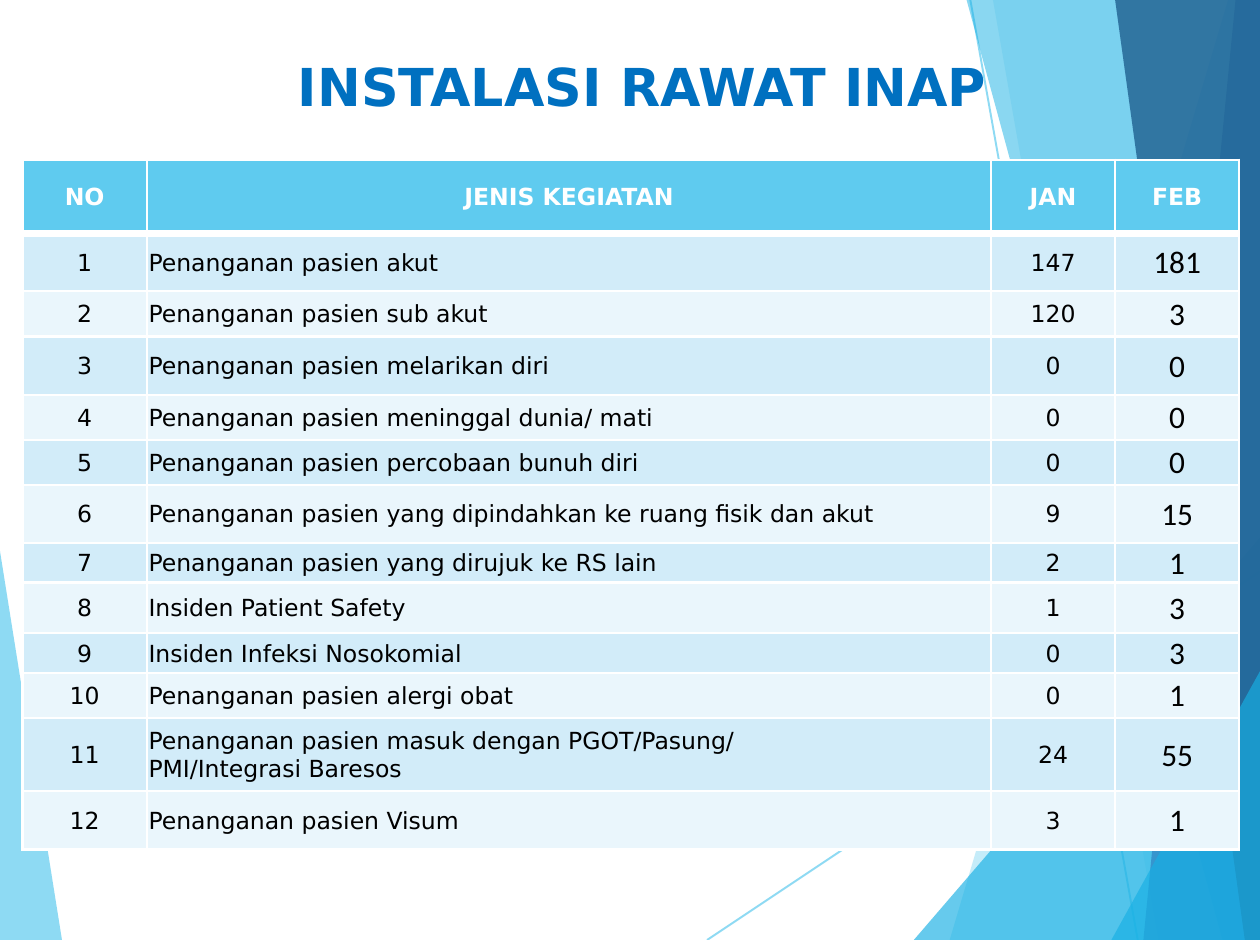
from lxml import etree
from pptx import Presentation
from pptx.dml.color import RGBColor
from pptx.enum.shapes import MSO_CONNECTOR
from pptx.enum.text import MSO_ANCHOR, PP_ALIGN
from pptx.oxml.ns import qn
from pptx.util import Pt

PX = 9144
WIDTH, HEIGHT = 670, 500

CENTER, LEFT = PP_ALIGN.CENTER, PP_ALIGN.LEFT
TOP, MIDDLE = MSO_ANCHOR.TOP, MSO_ANCHOR.MIDDLE
STRAIGHT = MSO_CONNECTOR.STRAIGHT

SKY = RGBColor(0x5F, 0xCB, 0xEF)
CYAN = RGBColor(0x17, 0xB0, 0xE4)
BLUE = RGBColor(0x2E, 0x83, 0xC3)
NAVY = RGBColor(0x22, 0x62, 0x92)
TITLE_BLUE = RGBColor(0x00, 0x70, 0xC0)
BAND_DARK = RGBColor(0xD2, 0xEC, 0xF9)
BAND_LIGHT = RGBColor(0xEA, 0xF6, 0xFC)
WHITE = RGBColor(0xFF, 0xFF, 0xFF)
BLACK = RGBColor(0x00, 0x00, 0x00)

SANS, CALIBRI = "DejaVu Sans", "Calibri"

LEFT_FACET = ([(0, 293), (33, 500), (0, 500)], SKY, 70)
RAYS = [(376, 500, 670, 304), (516, 0, 605, 500)]
RIGHT_FACETS = [
    ([(653, 0), (505, 500), (670, 500), (670, 0)], SKY, 36),
    ([(528, 0), (616, 500), (670, 500), (670, 0)], SKY, 20),
    ([(486, 500), (670, 286), (670, 500)], CYAN, 66),
    ([(514, 0), (650, 500), (670, 500), (670, 0)], CYAN, 50),
    ([(657, 0), (608, 500), (670, 500), (670, 0)], BLUE, 70),
    ([(593, 0), (662, 500), (670, 500), (670, 0)], NAVY, 82),
    ([(591, 500), (670, 357), (670, 500)], CYAN, 66),
]

HEADERS = ["NO", "JENIS KEGIATAN", "JAN", "FEB"]
ACTIVITIES = [
    ("Penanganan pasien akut", 147, 181),
    ("Penanganan pasien sub akut", 120, 3),
    ("Penanganan pasien melarikan diri", 0, 0),
    ("Penanganan pasien meninggal dunia/ mati", 0, 0),
    ("Penanganan pasien percobaan bunuh diri", 0, 0),
    ("Penanganan pasien yang dipindahkan ke ruang fisik dan akut", 9, 15),
    ("Penanganan pasien yang dirujuk ke RS lain", 2, 1),
    ("Insiden Patient Safety", 1, 3),
    ("Insiden Infeksi Nosokomial", 0, 3),
    ("Penanganan pasien alergi obat", 0, 1),
    ("Penanganan pasien masuk dengan PGOT/Pasung/\nPMI/Integrasi Baresos", 24, 55),
    ("Penanganan pasien Visum", 3, 1),
]
COLUMN_WIDTHS = [66, 449, 66, 66]
ROW_HEIGHTS = [39, 31, 24, 31, 24, 24, 31, 21, 27, 21, 24, 39, 31]


class Deck:
    def __init__(self):
        self.prs = Presentation()
        self.prs.slide_width = WIDTH * PX
        self.prs.slide_height = HEIGHT * PX
        self.s = self.prs.slides.add_slide(self.prs.slide_layouts[6])

    def set_alpha(self, sp, percent):
        clr = next(sp._element.spPr.iter(qn("a:srgbClr")))
        etree.SubElement(clr, qn("a:alpha"), val=str(percent * 1000))

    def facet(self, points, color, alpha):
        builder = self.s.shapes.build_freeform(*points[0], scale=PX)
        builder.add_line_segments(points[1:], close=True)
        sp = builder.convert_to_shape()
        sp.shadow.inherit = False
        sp.fill.solid()
        sp.fill.fore_color.rgb = color
        sp.line.fill.background()
        self.set_alpha(sp, alpha)

    def ray(self, x1, y1, x2, y2):
        sp = self.s.shapes.add_connector(STRAIGHT, x1 * PX, y1 * PX, x2 * PX, y2 * PX)
        sp.line.color.rgb = SKY
        sp.line.width = Pt(0.75)
        self.set_alpha(sp, 70)
        etree.SubElement(sp._element.spPr, qn("a:effectLst"))

    def add_text(self, tf, text, size, color, bold=False, font=SANS, align=CENTER):
        p = tf.paragraphs[0]
        p.alignment = align
        for i, part in enumerate(text.split("\n")):
            if i:
                p.add_line_break()
            r = p.add_run()
            r.text = part
            r.font.name = font
            r.font.size = Pt(size)
            r.font.bold = bold
            r.font.color.rgb = color

    def title(self, text, x, y, w, h):
        sp = self.s.shapes.add_textbox(x * PX, y * PX, w * PX, h * PX)
        tf = sp.text_frame
        tf.word_wrap = True
        tf.vertical_anchor = TOP
        tf.margin_top = 7 * PX
        self.add_text(tf, text, 20, TITLE_BLUE, bold=True)

    def border(self, cell, side, width):
        ln = etree.SubElement(cell._tc.get_or_add_tcPr(), qn("a:ln" + side), w=str(int(Pt(width))))
        fill = etree.SubElement(ln, qn("a:solidFill"))
        etree.SubElement(fill, qn("a:srgbClr"), val=str(WHITE))

    def cell(self, cell, row, col, text):
        cell.margin_left = cell.margin_right = cell.margin_top = PX
        cell.margin_bottom = 0
        cell.vertical_anchor = MIDDLE
        widths = {"L": 1, "R": 1, "T": 3 if row == 1 else 1, "B": 3 if row == 0 else 1}
        for side, width in widths.items():
            self.border(cell, side, width)
        cell.fill.solid()
        if row == 0:
            cell.fill.fore_color.rgb = SKY
            self.add_text(cell.text_frame, text, 9, WHITE, bold=True)
            return
        cell.fill.fore_color.rgb = BAND_DARK if row % 2 else BAND_LIGHT
        size, font = (12, CALIBRI) if col == 3 else (9, SANS)
        align = LEFT if col == 1 else CENTER
        self.add_text(cell.text_frame, text, size, BLACK, font=font, align=align)

    def table(self, rows, x, y, widths, heights):
        frame = self.s.shapes.add_table(len(rows), len(widths), x * PX, y * PX,
                                        sum(widths) * PX, sum(heights) * PX)
        table = frame.table
        for column, width in zip(table.columns, widths):
            column.width = width * PX
        for row, height in zip(table.rows, heights):
            row.height = height * PX
        for i, values in enumerate(rows):
            for j, value in enumerate(values):
                self.cell(table.cell(i, j), i, j, str(value))


def main():
    deck = Deck()
    deck.facet(*LEFT_FACET)
    for ray in RAYS:
        deck.ray(*ray)
    for facet in RIGHT_FACETS:
        deck.facet(*facet)
    deck.title("INSTALASI RAWAT INAP", 44, 22, 595, 53)
    rows = [HEADERS] + [(n, *activity) for n, activity in enumerate(ACTIVITIES, 1)]
    deck.table(rows, 12, 85, COLUMN_WIDTHS, ROW_HEIGHTS)
    deck.prs.save("out.pptx")


if __name__ == "__main__":
    main()
